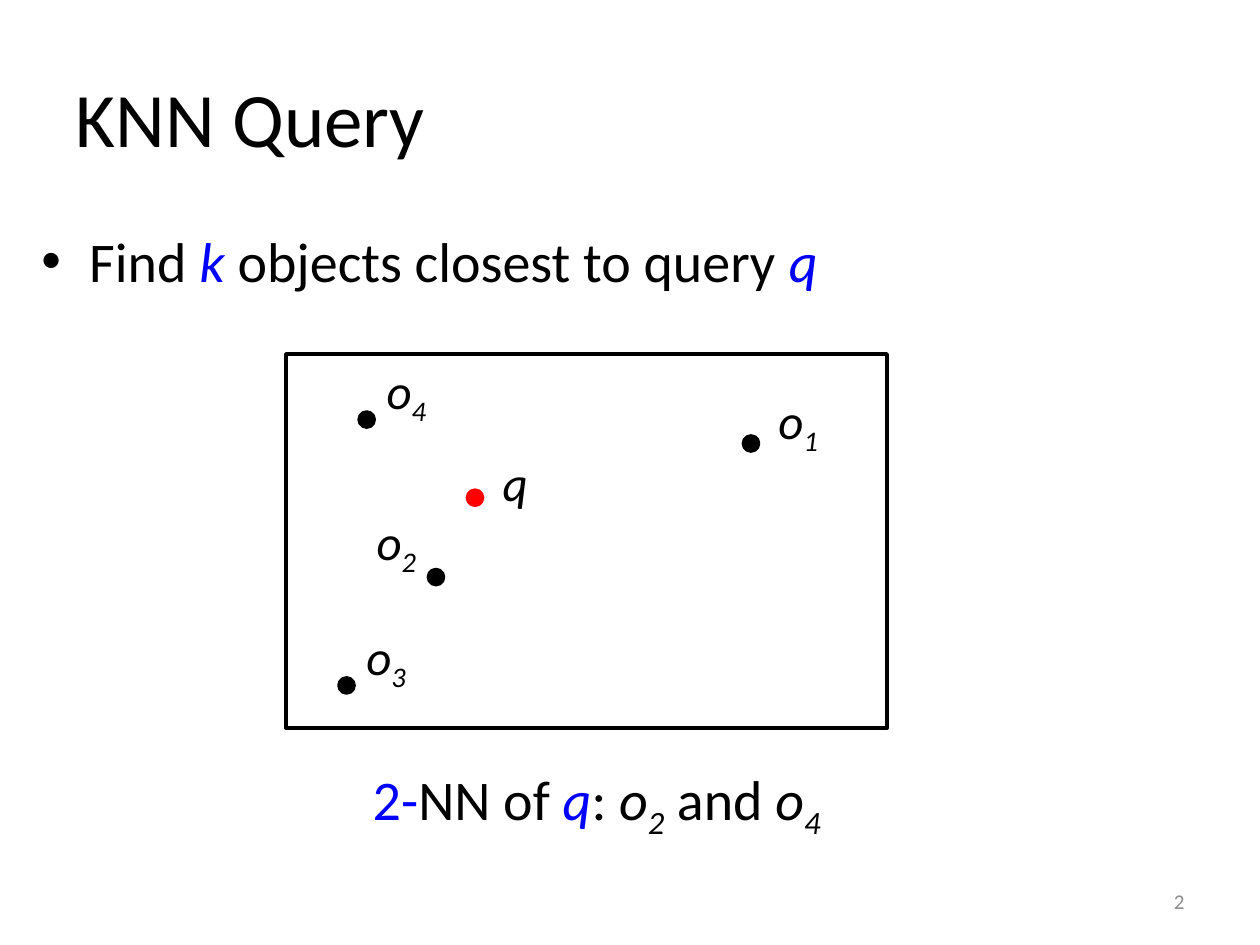
from dataclasses import dataclass

from lxml.etree import SubElement
from pptx import Presentation
from pptx.dml.color import RGBColor
from pptx.enum.shapes import MSO_SHAPE as Shape
from pptx.enum.text import MSO_ANCHOR as Anchor, PP_ALIGN as Align
from pptx.oxml.ns import qn
from pptx.util import Inches, Pt


@dataclass(frozen=True)
class Theme:
    """Colours, type sizes and line width of the slide."""
    font: str = "Calibri"
    ink: str = "000000"
    accent: str = "0000FF"
    query: str = "FF0000"
    muted: str = "8C8C8C"
    title: int = 44
    body: int = 32
    label: int = 28
    number: int = 12
    line: int = 2


THEME = Theme()
COLUMNS, ROWS = 100, 75
WIDTH, HEIGHT = Inches(10), Inches(7.5)
DOT = 1.2
ITALIC = {"italic": True}
KEY = {"italic": True, "color": THEME.accent}
SUB = {"italic": True, "baseline": -25}


def place(left, top, width, height):
    """Turn grid columns and rows into slide lengths."""
    return (round(left * WIDTH / COLUMNS), round(top * HEIGHT / ROWS),
            round(width * WIDTH / COLUMNS), round(height * HEIGHT / ROWS))


def write(frame, *runs, size, color=THEME.ink, align=Align.LEFT,
          anchor=Anchor.TOP, wrap=True, margin=0, hang=0, bullet=None):
    """Fill a text frame with (text, format) runs."""
    frame.word_wrap = wrap
    frame.vertical_anchor = anchor
    paragraph = frame.paragraphs[0]
    paragraph.alignment = align
    props = paragraph._p.get_or_add_pPr()
    props.set("marL", str(Inches(margin)))
    props.set("indent", str(Inches(-hang)))
    if bullet:
        SubElement(props, qn("a:buFont")).set("typeface", "Arial")
        SubElement(props, qn("a:buChar")).set("char", bullet)
    for text, style in runs:
        run = paragraph.add_run()
        run.text = text
        font = run.font
        font.name, font.size = THEME.font, Pt(size)
        font.italic = style.get("italic", False)
        font.color.rgb = RGBColor.from_string(style.get("color", color))
        if "baseline" in style:
            font._element.set("baseline", str(style["baseline"] * 1000))


def add_text(slide, box, *runs, **style):
    """Add a text box on the grid."""
    write(slide.shapes.add_textbox(*place(*box)).text_frame, *runs, **style)


def add_figure(slide, kind, box, fill=None, line=THEME.ink):
    """Add an outlined preset shape on the grid."""
    figure = slide.shapes.add_shape(kind, *place(*box))
    figure.shadow.inherit = False
    if fill:
        figure.fill.solid()
        figure.fill.fore_color.rgb = RGBColor.from_string(fill)
    else:
        figure.fill.background()
    figure.line.color.rgb = RGBColor.from_string(line)
    figure.line.width = Pt(THEME.line)


def add_point(slide, dot, label, *name, color=THEME.ink):
    """Add a data point and its label."""
    add_figure(slide, Shape.OVAL, (*dot, DOT, DOT), color, color)
    add_text(slide, (*label, 5.4, 5.7), *name, size=THEME.label, wrap=False)


def add_title(slide, text):
    """Place and format the title placeholder."""
    title = slide.shapes.title
    title.left, title.top, title.width, title.height = place(5, 3, 90, 12.5)
    write(title.text_frame, (text, {}), size=THEME.title, anchor=Anchor.MIDDLE)


def main():
    """Build the slide and save it."""
    deck = Presentation()
    deck.slide_width, deck.slide_height = WIDTH, HEIGHT
    slide = deck.slides.add_slide(deck.slide_layouts[5])
    add_title(slide, "KNN Query")
    add_text(slide, (2.3, 17.5, 90, 9.1), ("Find ", {}), ("k", KEY),
             (" objects closest to query ", {}), ("q", KEY),
             size=THEME.body, margin=0.38, hang=0.38, bullet="•")
    add_text(slide, (71.7, 69.5, 23.3, 4), ("2", {}), size=THEME.number,
             color=THEME.muted, align=Align.RIGHT, anchor=Anchor.MIDDLE)

    add_figure(slide, Shape.RECTANGLE, (22.7, 28.1, 47.7, 29.7))
    add_point(slide, (37.1, 38.9), (38.9, 35.4), ("q", ITALIC), color=THEME.query)
    objects = {
        "1": ((59, 34.6), (60.8, 30.5)),
        "2": ((34, 45.2), (28.9, 40.1)),
        "3": ((26.9, 53.8), (28.1, 49.2)),
        "4": ((28.5, 32.7), (29.7, 28.1)),
    }
    for index, (dot, label) in objects.items():
        add_point(slide, dot, label, ("o", ITALIC), (index, SUB))

    add_text(slide, (26.6, 60.2, 41.3, 9.1), ("2-", {"color": THEME.accent}),
             ("NN of ", {}), ("q", KEY), (": ", {}), ("o", ITALIC), ("2", SUB),
             (" and ", {}), ("o", ITALIC), ("4", SUB),
             size=THEME.body, margin=0.2)
    deck.save("out.pptx")


if __name__ == "__main__":
    main()
